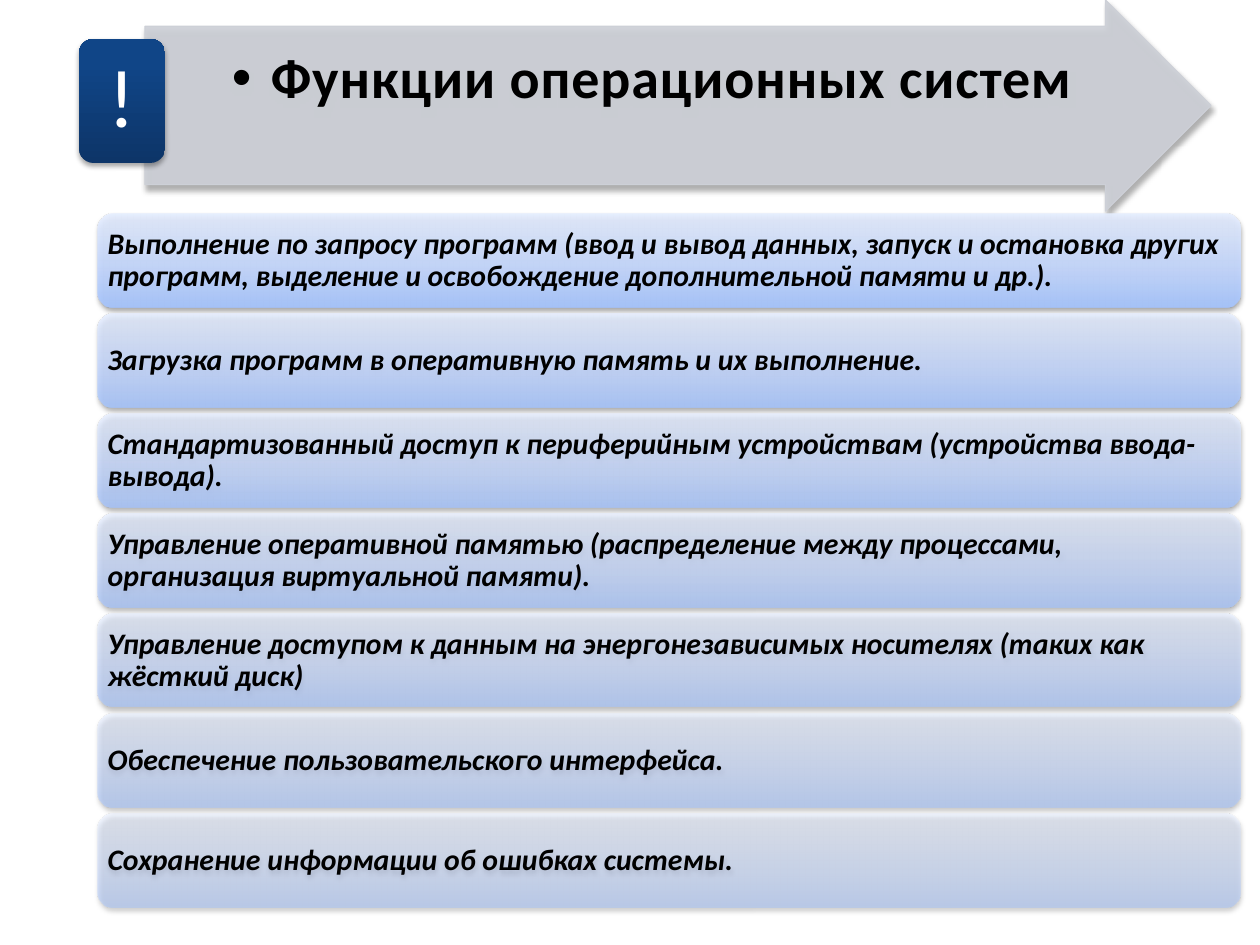
from pptx import Presentation
from pptx.dml.color import RGBColor
from pptx.enum.shapes import MSO_SHAPE
from pptx.enum.text import MSO_ANCHOR, PP_ALIGN
from pptx.oxml import parse_xml
from pptx.oxml.ns import nsdecls, qn
from pptx.util import Pt

# Content
TITLE = "Функции операционных систем"
BADGE = "!"
FUNCTIONS = [
    "Выполнение по запросу программ (ввод и вывод данных, запуск и остановка других программ, "
    "выделение и освобождение дополнительной памяти и др.).",
    "Загрузка программ в оперативную память и их выполнение.",
    "Стандартизованный доступ к периферийным устройствам (устройства ввода-вывода).",
    "Управление оперативной памятью (распределение между процессами, "
    "организация виртуальной памяти).",
    "Управление доступом к данным на энергонезависимых носителях (таких как жёсткий диск)",
    "Обеспечение пользовательского интерфейса.",
    "Сохранение информации об ошибках системы.",
]

# Layout in px, 126 to the inch
SLIDE_W, SLIDE_H = 1260, 945
ARROW_BOX = (145, 0, 1066, 211)
BADGE_BOX = (79, 39, 86, 124)
ROW_LEFT, ROW_TOP, ROW_W, ROW_H, ROW_PITCH = 98, 214, 1142, 93, 100
BULLET_INDENT = 39
FIRST_ALPHA, LAST_ALPHA = 90, 50

# Style
COLORS = {"arrow": "CDD0D7", "text": "000000", "badge_text": "FFFFFF", "shadow": "000000"}
BADGE_STOPS = [(0, "0D3568"), (80, "104587"), (100, "0E458A")]
ROW_STOPS = [(0, "A4C4FF"), (35, "BFD4FF"), (100, "E6EEFF")]
TITLE_FONT = {"size": Pt(32), "bold": True}
BADGE_FONT = {"size": Pt(47)}
ROW_FONT = {"size": Pt(17), "bold": True, "italic": True}


def px(length):
    return round(length * 914400 / 126)


def color_xml(color, alpha):
    return (f'<a:srgbClr {nsdecls("a")} val="{color}">'
            f'<a:alpha val="{round(alpha * 1000)}"/></a:srgbClr>')


def add_panel(slide, preset, box, stops, alpha, shadow_alpha, shadow_distance):
    """Add a shape with an upward gradient (or one flat colour) and a soft shadow."""
    panel = slide.shapes.add_shape(preset, *map(px, box))
    panel.line.fill.background()
    panel.fill.background()
    if len(stops) == 1:
        fill = f'<a:solidFill {nsdecls("a")}>{color_xml(stops[0][1], alpha)}</a:solidFill>'
    else:
        marks = "".join(f'<a:gs pos="{pos * 1000}">{color_xml(color, alpha)}</a:gs>'
                        for pos, color in stops)
        fill = (f'<a:gradFill {nsdecls("a")} rotWithShape="1"><a:gsLst>{marks}</a:gsLst>'
                '<a:lin ang="16200000" scaled="0"/></a:gradFill>')
    properties = panel._element.spPr
    properties.replace(properties.find(qn("a:noFill")), parse_xml(fill))
    panel.shadow.inherit = False
    properties.find(qn("a:effectLst")).append(parse_xml(
        f'<a:outerShdw {nsdecls("a")} blurRad="{Pt(3.1)}" dist="{Pt(shadow_distance)}" '
        f'dir="5400000" rotWithShape="0">{color_xml(COLORS["shadow"], shadow_alpha)}'
        '</a:outerShdw>'))
    return panel


def write(panel, text, font, color, align, anchor, insets):
    frame = panel.text_frame
    frame.word_wrap = True
    frame.vertical_anchor = anchor
    for side, inset in zip(("left", "top", "right", "bottom"), insets):
        setattr(frame, f"margin_{side}", px(inset))
    paragraph = frame.paragraphs[0]
    paragraph.alignment = align
    paragraph.line_spacing = 0.9
    run = paragraph.add_run()
    run.text = text
    run.font.color.rgb = RGBColor.from_string(color)
    for name, value in {"name": "Calibri", **font}.items():
        setattr(run.font, name, value)
    return paragraph


prs = Presentation()
prs.slide_width, prs.slide_height = px(SLIDE_W), px(SLIDE_H)
slide = prs.slides.add_slide(prs.slide_layouts[6])

# Title arrow
arrow = add_panel(slide, MSO_SHAPE.RIGHT_ARROW, ARROW_BOX, [(0, COLORS["arrow"])], 90, 35, 1.8)
arrow.adjustments[0], arrow.adjustments[1] = 0.75, 0.5
arrow.line.color.rgb = RGBColor.from_string(COLORS["arrow"])
arrow.line.width = Pt(0.75)
title = write(arrow, TITLE, TITLE_FONT, COLORS["text"], PP_ALIGN.CENTER, MSO_ANCHOR.TOP,
              (27, 24, 0, 0))
title.runs[0]._r.get_or_add_rPr().set("spc", "50")
bullet = title._p.get_or_add_pPr()
bullet.set("marL", str(px(BULLET_INDENT)))
bullet.set("indent", str(-px(BULLET_INDENT)))
bullet.append(parse_xml(f'<a:buFont {nsdecls("a")} typeface="Arial"/>'))
bullet.append(parse_xml(f'<a:buChar {nsdecls("a")} char="•"/>'))

# Exclamation badge
badge = add_panel(slide, MSO_SHAPE.ROUNDED_RECTANGLE, BADGE_BOX, BADGE_STOPS, 100, 35, 1.8)
write(badge, BADGE, BADGE_FONT, COLORS["badge_text"], PP_ALIGN.CENTER, MSO_ANCHOR.MIDDLE,
      (0, 0, 0, 0))

# Function rows, fading downwards
fade = (FIRST_ALPHA - LAST_ALPHA) / (len(FUNCTIONS) - 1)
for index, function in enumerate(FUNCTIONS):
    box = (ROW_LEFT, ROW_TOP + index * ROW_PITCH, ROW_W, ROW_H)
    row = add_panel(slide, MSO_SHAPE.ROUNDED_RECTANGLE, box, ROW_STOPS,
                    FIRST_ALPHA - index * fade, 38, 1.6)
    write(row, function, ROW_FONT, COLORS["text"], PP_ALIGN.LEFT, MSO_ANCHOR.MIDDLE,
          (5, 5, 5, 5))

prs.save("out.pptx")
